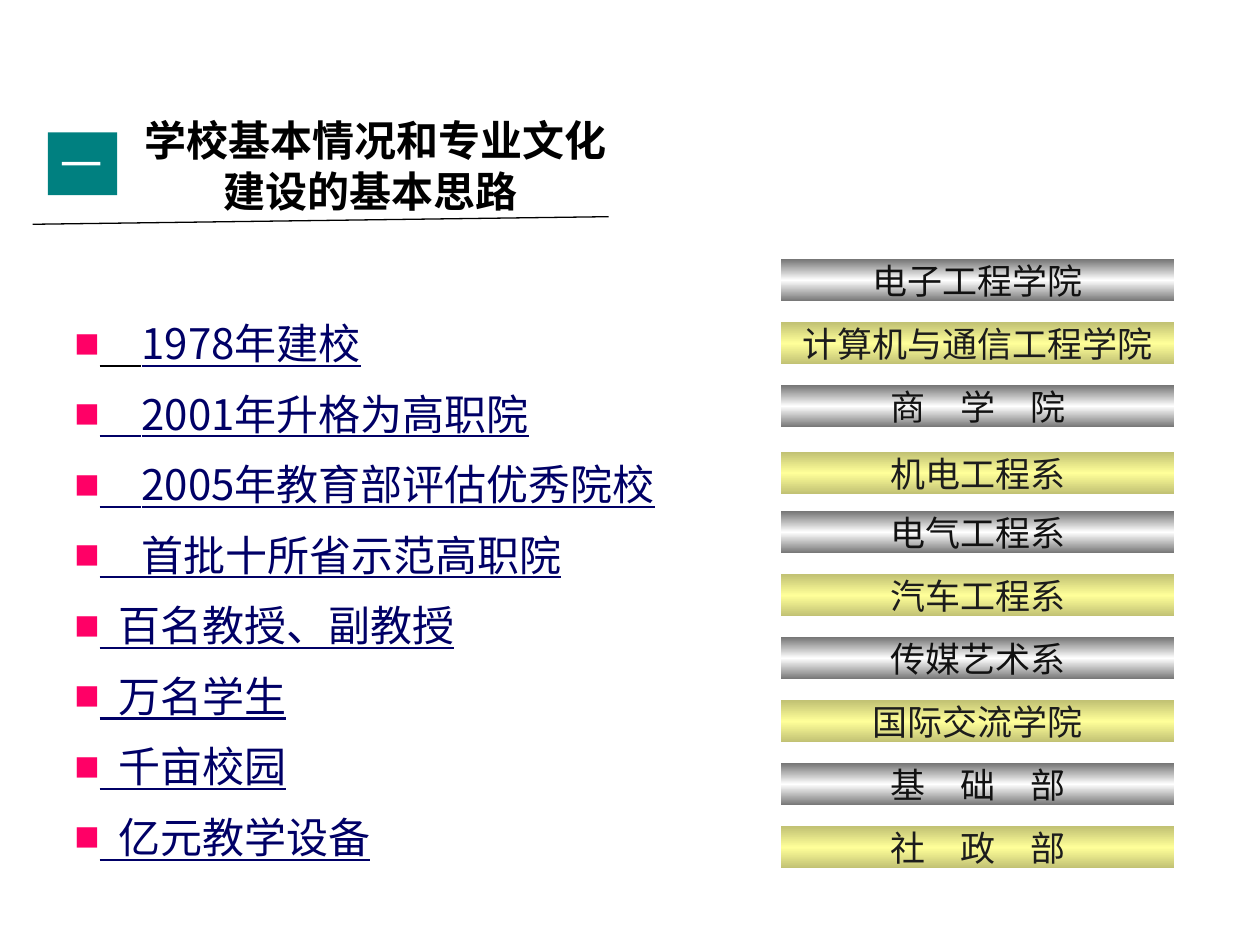
from copy import deepcopy
from lxml.etree import SubElement
from pptx import Presentation
from pptx.dml.color import RGBColor
from pptx.enum.shapes import MSO_CONNECTOR, MSO_SHAPE
from pptx.enum.text import MSO_ANCHOR, MSO_AUTO_SIZE, PP_ALIGN
from pptx.oxml.ns import qn
from pptx.util import Inches, Pt

THEME = {
    "black": "000000", "white": "FFFFFF", "navy": "000066",
    "pink": "FF0066", "teal": "008080",
    "large": 24, "small": 20,
    "sans": "Arial", "han": "Noto Sans CJK SC",
    "bars": [(("777777", "FFFFFF", "777777"), "111111"),
             (("C2C274", "FFFF99", "C2C274"), "1C1C1C")],
}


def place(shape, left, top, width, height):
    spots = {"left": left, "top": top, "width": width, "height": height}
    for name, value in spots.items():
        setattr(shape, name, Inches(value))


def write(para, text, face, size, color, **form):
    run = para.add_run()
    run.text = text
    form.update(name=face, size=Pt(size))
    for name, value in form.items():
        setattr(run.font, name, value)
    run.font.color.rgb = RGBColor.from_string(color)
    SubElement(run.font._element, qn("a:ea"), typeface=THEME["han"])


deck = Presentation()
deck.slide_width, deck.slide_height = Inches(10), Inches(7.5)
slide = deck.slides.add_slide(deck.slide_layouts[1])
title, body = slide.placeholders

place(title, 0.96, 0.86, 4.04, 0.91)
place(body, 0.49, 2.31, 5.32, 4.62)
for box in (title, body):
    frame = box.text_frame
    form = {"word_wrap": True, "auto_size": MSO_AUTO_SIZE.NONE,
            "vertical_anchor": MSO_ANCHOR.TOP}
    for name, value in form.items():
        setattr(frame, name, value)

head = title.text_frame.paragraphs[0]
head.alignment = PP_ALIGN.CENTER
write(head, "学校基本情况和专业文化建设的基本思路 ", THEME["han"],
      THEME["large"], THEME["black"], bold=True)

facts = [
    ("\u3000".strip() + "　", "1978年建校"),
    ("　", "2001年升格为高职院"),
    ("　", "2005年教育部评估优秀院校"),
    ("　", "首批十所省示范高职院"),
    ("  ", "百名教授、副教授"),
    ("  ", "万名学生"),
    ("  ", "千亩校园"),
    ("  ", "亿元教学设备"),
]
frame = body.text_frame
for row, (gap, fact) in enumerate(facts):
    para = frame.add_paragraph() if row else frame.paragraphs[0]
    para.line_spacing = 1.4
    para.space_before = Pt(0)
    props = para._p.get_or_add_pPr()
    props.set("marL", "0")
    props.set("indent", "0")
    tint = SubElement(props, qn("a:buClr"))
    SubElement(tint, qn("a:srgbClr"), val=THEME["pink"])
    SubElement(props, qn("a:buFont"), typeface=THEME["sans"])
    SubElement(props, qn("a:buChar"), char="■")
    start = THEME["navy"] if row else THEME["black"]
    for text, color in ((gap, start), (fact, THEME["navy"])):
        write(para, text, THEME["han"], THEME["large"], color, underline=True)

units = ["电子工程学院", "计算机与通信工程学院", "商　学　院", "机电工程系",
         "电气工程系", "汽车工程系", "传媒艺术系", "国际交流学院",
         "基　础　部", "社　政　部"]
shift = {"机电工程系": 0.03}
for row, unit in enumerate(units):
    shades, ink = THEME["bars"][row % 2]
    top = 2.06 + 0.5 * row + shift.get(unit, 0)
    bar = slide.shapes.add_shape(
        MSO_SHAPE.RECTANGLE, Inches(6.2), Inches(top), Inches(3.12), Inches(0.33))
    bar.shadow.inherit = False
    bar.line.fill.background()
    bar.fill.gradient()
    bar.fill.gradient_angle = 90
    stops = bar._element.spPr.find(qn("a:gradFill")).find(qn("a:gsLst"))
    stops.append(deepcopy(stops[0]))
    for stop, shade, spot in zip(bar.fill.gradient_stops, shades, (0, 0.5, 1)):
        stop.color.rgb = RGBColor.from_string(shade)
        stop.position = spot
    frame = bar.text_frame
    frame.word_wrap = False
    frame.vertical_anchor = MSO_ANCHOR.MIDDLE
    para = frame.paragraphs[0]
    para.alignment = PP_ALIGN.CENTER
    write(para, unit, THEME["sans"], THEME["small"], ink)

badge = slide.shapes.add_shape(
    MSO_SHAPE.RECTANGLE, Inches(0.38), Inches(1.05), Inches(0.55), Inches(0.5))
badge.shadow.inherit = False
badge.line.fill.background()
badge.fill.solid()
badge.fill.fore_color.rgb = RGBColor.from_string(THEME["teal"])
badge.text_frame.vertical_anchor = MSO_ANCHOR.TOP
para = badge.text_frame.paragraphs[0]
para.alignment = PP_ALIGN.LEFT
write(para, "一", THEME["sans"], THEME["large"], THEME["white"])

rule = slide.shapes.add_connector(
    MSO_CONNECTOR.STRAIGHT, Inches(0.26), Inches(1.78), Inches(4.83), Inches(1.72))
rule.line.width = Pt(0.75)
rule.line.color.rgb = RGBColor.from_string(THEME["black"])
SubElement(rule._element.spPr, qn("a:effectLst"))

deck.save("out.pptx")
